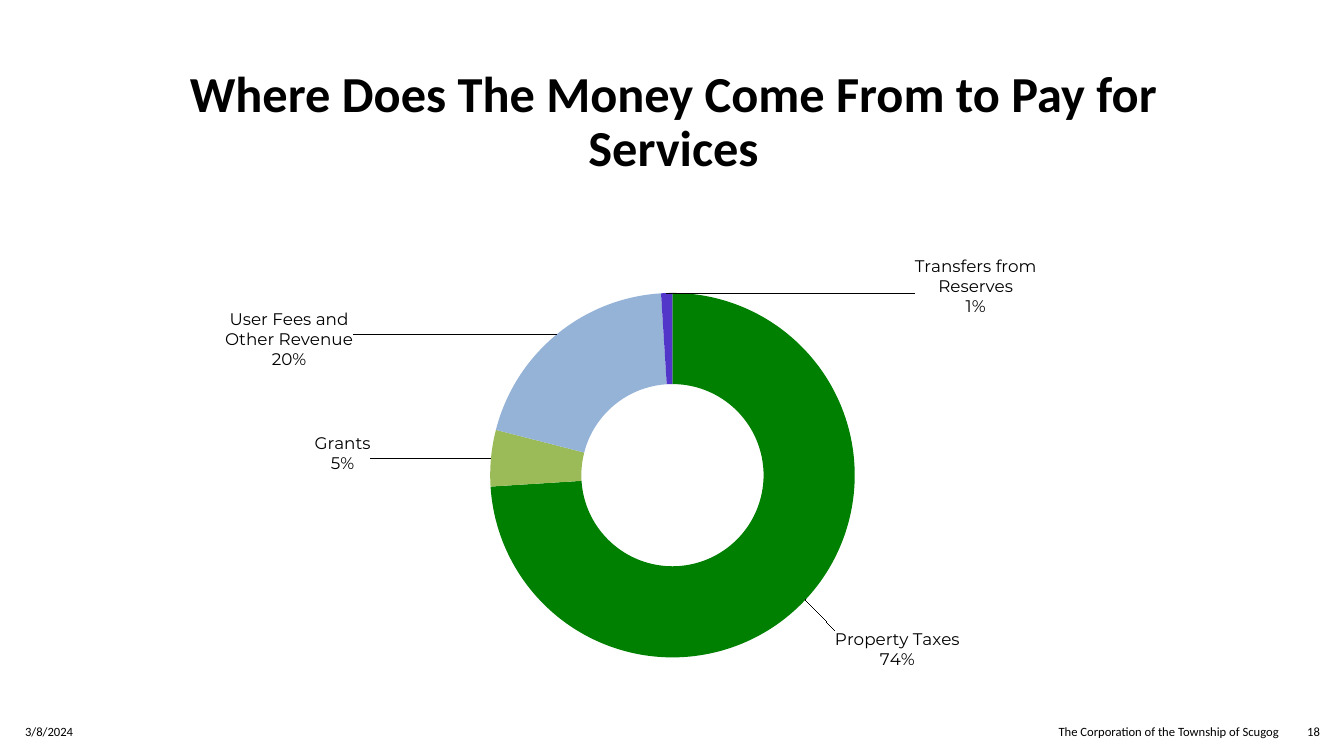
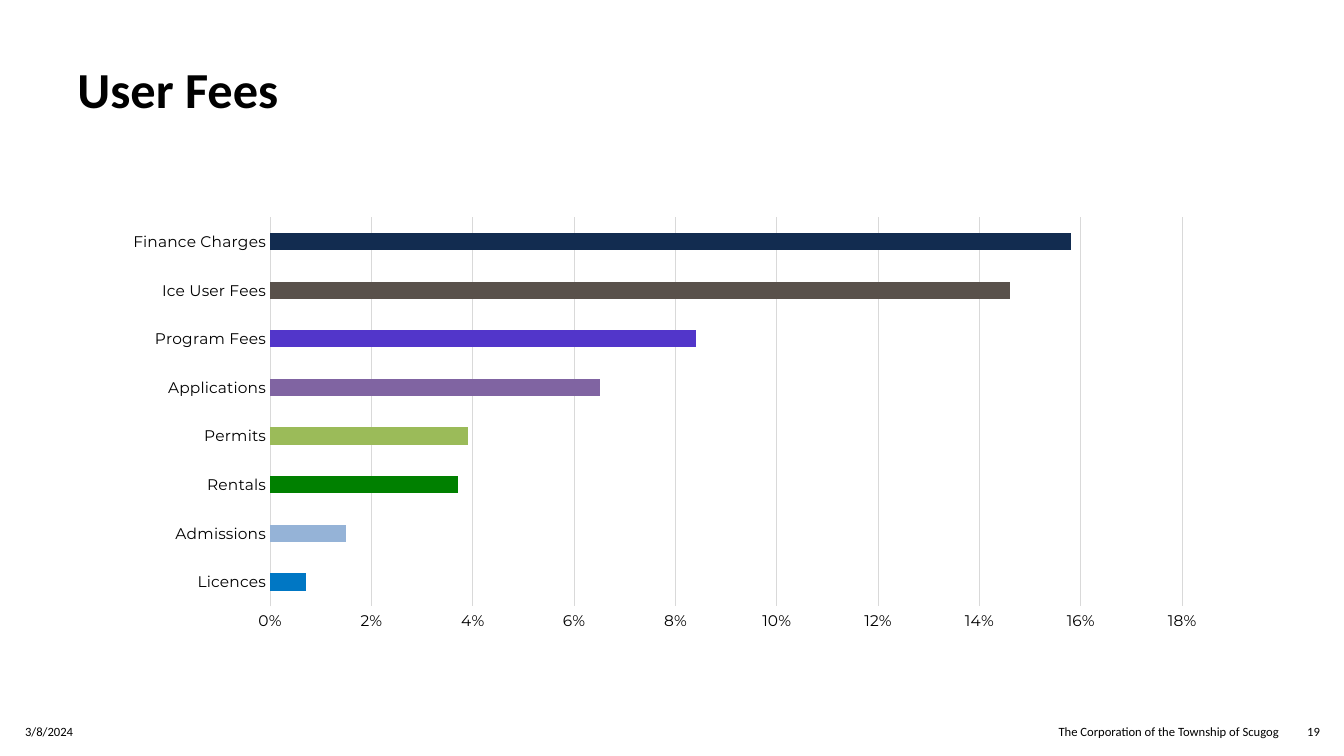
from copy import deepcopy

from pptx import Presentation
from pptx.chart.data import CategoryChartData
from pptx.dml.color import RGBColor
from pptx.enum.chart import XL_CHART_TYPE, XL_TICK_MARK
from pptx.enum.text import MSO_ANCHOR, PP_ALIGN
from pptx.oxml import parse_xml
from pptx.oxml.ns import nsdecls, qn
from pptx.util import Inches, Pt

DOUGHNUT, BAR = XL_CHART_TYPE.DOUGHNUT, XL_CHART_TYPE.BAR_CLUSTERED
NO_TICK = XL_TICK_MARK.NONE
LEFT, CENTER, RIGHT = PP_ALIGN.LEFT, PP_ALIGN.CENTER, PP_ALIGN.RIGHT
TOP, MIDDLE = MSO_ANCHOR.TOP, MSO_ANCHOR.MIDDLE

BLACK = RGBColor(0x00, 0x00, 0x00)
GRID = RGBColor(0xD9, 0xD9, 0xD9)
GREEN = RGBColor(0x00, 0x80, 0x00)
OLIVE = RGBColor(0x9B, 0xBB, 0x59)
PALE_BLUE = RGBColor(0x95, 0xB3, 0xD7)
VIOLET = RGBColor(0x52, 0x36, 0xCA)
BLUE = RGBColor(0x00, 0x77, 0xC4)
PURPLE = RGBColor(0x80, 0x64, 0xA2)
TAUPE = RGBColor(0x59, 0x51, 0x4B)
NAVY = RGBColor(0x12, 0x2C, 0x50)

REVENUE = [
    ("Property Taxes", 74, GREEN, (0.11, 0.19)),
    ("Grants", 5, OLIVE, (-0.17, -0.02)),
    ("User Fees and Other Revenue", 20, PALE_BLUE, (-0.26, -0.07)),
    ("Transfers from Reserves", 1, VIOLET, (0.27, -0.12)),
]
USER_FEES = [
    ("Licences", 0.007, BLUE),
    ("Admissions", 0.015, PALE_BLUE),
    ("Rentals", 0.037, GREEN),
    ("Permits", 0.039, OLIVE),
    ("Applications", 0.065, PURPLE),
    ("Program Fees", 0.084, VIOLET),
    ("Ice User Fees", 0.146, TAUPE),
    ("Finance Charges", 0.158, NAVY),
]


class Deck:
    """Hold the shared style and the current slide."""

    text_font, chart_font = "Calibri", "Montserrat"

    def __init__(self):
        self.prs = Presentation()
        self.prs.slide_width, self.prs.slide_height = Inches(13.33), Inches(7.5)
        self.slide = None

    def new_slide(self, number):
        self.slide = self.prs.slides.add_slide(self.prs.slide_layouts[6])
        self.footer("3/8/2024", 0.15, 3.82, LEFT)
        self.footer("The Corporation of the Township of Scugog", 9.71, 3.07, RIGHT)
        self.footer(str(number), 12.72, 0.47, RIGHT)

    def text(self, words, box, size, align, anchor):
        frame = self.slide.shapes.add_textbox(*map(Inches, box)).text_frame
        frame.word_wrap = True
        frame.vertical_anchor = anchor
        paragraph = frame.paragraphs[0]
        paragraph.text = words
        paragraph.alignment = align
        self.style(paragraph.font, self.text_font, size)
        return paragraph

    def style(self, font, face, size):
        font.name, font.size = face, Pt(size)
        font.color.rgb = BLACK

    def footer(self, words, left, width, align):
        self.text(words, (left, 7.06, width, 0.4), 9, align, MIDDLE).space_after = Pt(6)

    def title(self, words, left, width, align, anchor):
        heading = self.text(words, (left, 0.6, width, 1.24), 36, align, anchor)
        heading.line_spacing = 0.9
        heading.font.bold = True

    def layout(self, **places):
        inner = '<c:layoutTarget val="inner"/>' if "w" in places else ""
        modes = "".join(f'<c:{key}Mode val="edge"/>' for key in "xy") if inner else ""
        values = "".join(f'<c:{key} val="{value}"/>' for key, value in places.items())
        return parse_xml(
            f'<c:layout {nsdecls("c")}><c:manualLayout>{inner}{modes}{values}'
            "</c:manualLayout></c:layout>")

    def chart(self, kind, box, rows, size, number_format, **plot_place):
        data = CategoryChartData(number_format=number_format)
        data.categories = [row[0] for row in rows]
        data.add_series("Series 1", [row[1] for row in rows])
        chart = self.slide.shapes.add_chart(kind, *map(Inches, box), data).chart
        chart.has_legend = chart.has_title = False
        self.style(chart.font, self.chart_font, size)
        series = chart.plots[0].series[0]
        for index, row in enumerate(rows):
            look = series.points[index].format
            look.fill.solid()
            look.fill.fore_color.rgb = row[2]
            look.line.fill.background()
        plot_area = chart.plots[0]._element.getparent()
        for old in plot_area.findall(qn("c:layout")):
            plot_area.remove(old)
        plot_area.insert(0, self.layout(**plot_place))
        return chart

    def doughnut(self, box, rows, **plot_place):
        chart = self.chart(DOUGHNUT, box, rows, 12, "General", **plot_place)
        labels = chart.plots[0].series[0].data_labels
        labels.show_value = False
        labels.show_category_name = labels.show_percentage = True
        labels.number_format, labels.number_format_is_linked = "0%", False
        self.style(labels.font, self.chart_font, 12)
        shared = labels._element
        shared.find(qn("c:showBubbleSize")).addnext(
            parse_xml(f'<c:separator {nsdecls("c")}>\n</c:separator>'))
        leader = shared.find(qn("c:showLeaderLines"))
        if leader is None:
            leader = parse_xml(f'<c:showLeaderLines {nsdecls("c")}/>')
            shared.append(leader)
        leader.set("val", "1")
        settings = [part for part in shared if part is not leader]
        for index, row in enumerate(rows):
            x, y = row[3]
            label = parse_xml(f'<c:dLbl {nsdecls("c")}><c:idx val="{index}"/></c:dLbl>')
            label.append(self.layout(x=x, y=y))
            label.extend(deepcopy(settings))
            shared.insert(index, label)

    def bars(self, box, rows, **plot_place):
        chart = self.chart(BAR, box, rows, 11, "0%", **plot_place)
        chart.plots[0].gap_width = 182
        chart.plots[0].vary_by_categories = False
        names, shares = chart.category_axis, chart.value_axis
        for axis in (names, shares):
            axis.major_tick_mark = axis.minor_tick_mark = NO_TICK
            self.style(axis.tick_labels.font, self.chart_font, 11)
        names.has_major_gridlines = False
        shares.has_major_gridlines = True
        for line in (names.format.line, shares.major_gridlines.format.line):
            line.color.rgb = GRID
            line.width = Pt(0.75)
        shares.format.line.fill.background()
        shares.minimum_scale, shares.maximum_scale, shares.major_unit = 0, 0.18, 0.02
        shares.tick_labels.number_format = "0%"
        shares.tick_labels.number_format_is_linked = False


def main():
    deck = Deck()

    deck.new_slide(18)
    deck.title("Where Does The Money Come From to Pay for Services",
               1.67, 10.02, CENTER, MIDDLE)
    deck.doughnut((1.02, 2.42, 11.3, 4.25), REVENUE, x=0.34, y=0.11, w=0.32, h=0.86)

    deck.new_slide(19)
    deck.title("User Fees", 0.67, 11.65, LEFT, TOP)
    deck.bars((1.28, 2.07, 10.77, 4.29), USER_FEES, x=0.13, y=0.02, w=0.84, h=0.9)

    deck.prs.save("out.pptx")


if __name__ == "__main__":
    main()
